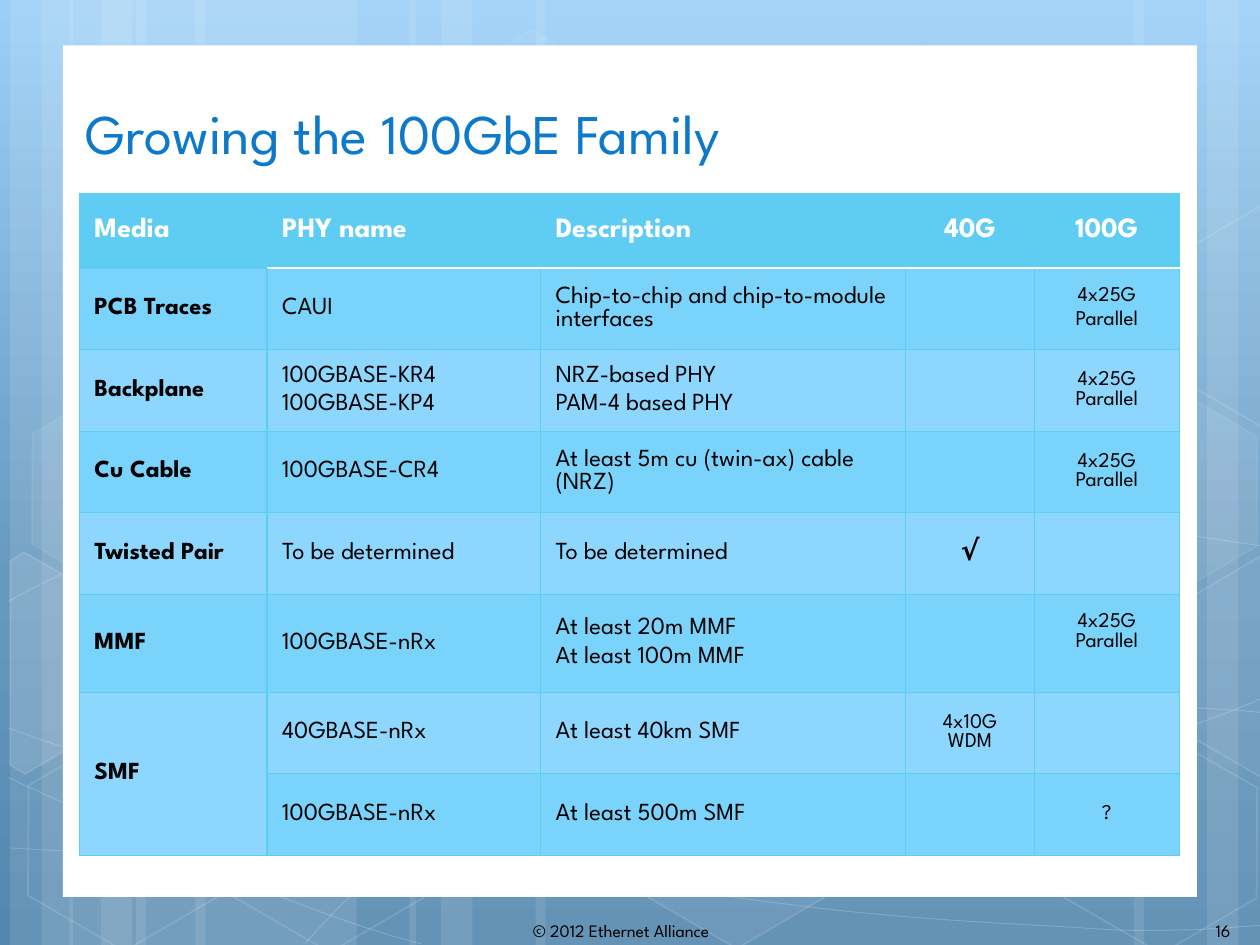
from copy import deepcopy
from dataclasses import dataclass
from math import cos, radians, sin

from lxml import etree
from pptx import Presentation
from pptx.dml.color import RGBColor
from pptx.enum import shapes, text
from pptx.oxml import ns
from pptx.util import Inches, Pt


@dataclass(frozen=True)
class Theme:
    """Colours, font and type sizes of the slide."""
    font: str = "League Spartan"
    white: str = "FFFFFF"
    black: str = "000000"
    title: str = "0D79CA"
    edge: str = "5ECCF3"
    bands: tuple = ("7AD3FA", "8DD7FF")
    sky: tuple = ((0, "9BCFF7"), (0.62, "6798BE"), (1, "5487AE"))
    big: int = 32
    head: int = 16
    body: int = 14
    small: int = 12
    foot: int = 10


T = Theme()
LEFT, MID = text.PP_ALIGN.LEFT, text.PP_ALIGN.CENTER
STRIPES = [
    (1.08, 1.75), (0.08, 0.5), (0.33, 0.83), (1.55, 1.75), (0.55, 0.5), (0.8, 0.83),
    (7.33, 1.75), (9.58, 0.5), (9, 0.83), (4.25, 3.08), (3.25, 0.5), (3.5, 0.83),
]
CURVES = [
    [(0.07, 6.73), (0.61, 6.76), (1.15, 6.79), (1.9, 6.78), (2.65, 6.77), (3.58, 6.75),
     (4.58, 6.65), (5.58, 6.55), (7, 6.36), (7.92, 6.17), (8.83, 5.98), (9.77, 5.68),
     (10.07, 5.51)],
    [(0.07, 4.77), (0.36, 4.61), (0.65, 4.46), (1.21, 4.31), (1.78, 4.16), (2.59, 3.94),
     (3.47, 3.87), (4.36, 3.8), (5.44, 3.79), (6.54, 3.87), (7.64, 3.95), (9.47, 4.26),
     (10.07, 4.34)],
    [(0.06, 6.17), (1.27, 6.72), (2.47, 7.27), (3.34, 7.49)],
    [(0.07, 5.78), (0.38, 5.89), (0.7, 6), (1.28, 6.16), (1.86, 6.31), (2.73, 6.56),
     (3.57, 6.73), (4.4, 6.9), (5.45, 7.08), (6.28, 7.18), (7.11, 7.29), (8, 7.33),
     (8.53, 7.36), (9.05, 7.4), (9.19, 7.38), (9.45, 7.38), (9.71, 7.37), (9.89, 7.35),
     (10.07, 7.34)],
    [(2.42, 7.49), (2.6, 7.29), (2.78, 7.09), (3.02, 6.91), (3.26, 6.73), (3.6, 6.53),
     (3.88, 6.39), (4.16, 6.25), (4.33, 6.19), (4.7, 6.09), (5.06, 5.99), (5.73, 5.85),
     (6.08, 5.78), (6.44, 5.71), (6.49, 5.71), (6.8, 5.69), (7.11, 5.66), (7.6, 5.63),
     (7.94, 5.62), (8.29, 5.61), (8.86, 5.62), (8.86, 5.62), (9.08, 5.62), (9.31, 5.62),
     (9.53, 5.62), (9.71, 5.63), (9.88, 5.64), (10.06, 5.66)],
]
HEXES = [
    (3.34, 0.36, 4, 8), (4.97, 5.89, 6, 12), (0.11, 5.91, 0, 12), (0.14, 3.12, 7, 8),
    (1.74, 5.92, 0, 12), (7.53, 4.53, 10, 12), (8.34, 5.93, 0, 12), (8.34, 3.14, 7, 8),
]
CUTS = [
    ([(0.08, 4.45), (0.19, 4.38), (0.96, 4.82), (0.95, 5.7), (0.2, 6.14), (0.08, 6.07)],
     (0.36, 5.35), 10),
    ([(9.26, 4.85), (10.01, 4.41), (10.09, 4.46), (10.09, 6.13), (10.02, 6.17), (9.26, 5.73)],
     (9.85, 5.2), 4),
    ([(9.26, 2.07), (10.01, 1.63), (10.1, 1.68), (10.09, 3.35), (10.02, 3.39), (9.26, 2.95)],
     (9.85, 2.41), 0),
]
COLS = [1.49, 2.17, 2.9, 1.02, 1.15]
ROWS = [0.59, 0.65, 0.65, 0.65, 0.65, 0.78, 0.65, 0.65]
CELLS = [
    ["Media", "PHY name", "Description", "40G", "100G"],
    ["PCB Traces", "CAUI", "Chip-to-chip and chip-to-module interfaces", "", "4x25G\nParallel"],
    ["Backplane", "100GBASE-KR4\n100GBASE-KP4", "NRZ-based PHY\nPAM-4 based PHY", "",
     "4x25G Parallel"],
    ["Cu Cable", "100GBASE-CR4", "At least 5m cu (twin-ax) cable (NRZ)", "", "4x25G Parallel"],
    ["Twisted Pair", "To be determined", "To be determined", "√", ""],
    ["MMF", "100GBASE-nRx", "At least 20m MMF\nAt least 100m MMF", "", "4x25G Parallel"],
    ["SMF", "40GBASE-nRx", "At least 40km SMF", "4x10G WDM", ""],
    ["", "100GBASE-nRx", "At least 500m SMF", "", "?"],
]


def rgb(hue):
    """Turn a hex string into a colour."""
    return RGBColor.from_string(hue)


def paint(shape, fill=0, line=0, width=1):
    """Give a shape white fill and line at the given percent opacity."""
    shape.shadow.inherit = False
    for coat, alpha in ((shape.fill, fill), (shape.line.fill, line)):
        if not alpha:
            coat.background()
            continue
        coat.solid()
        coat.fore_color.rgb = rgb(T.white)
    if line:
        shape.line.width = Pt(width)
    props = shape.element.spPr
    for root, alpha in ((props, fill), (props.find(ns.qn("a:ln")), line)):
        if 0 < alpha < 100:
            hue = root.find(ns.qn("a:solidFill"))[0]
            etree.SubElement(hue, ns.qn("a:alpha"), val=str(alpha * 1000))


def write(frame, words, size, hue, bold=False, align=LEFT):
    """Write each line of words as a paragraph."""
    for i, line in enumerate(words.split("\n")):
        para = frame.add_paragraph() if i else frame.paragraphs[0]
        para.alignment = align
        para.space_before = Pt(size * 0.23 if i else 0)
        run = para.add_run()
        run.text = line
        font = run.font
        font.name, font.size, font.bold = T.font, Pt(size), bold
        font.color.rgb = rgb(hue)


def block(slide, kind, box):
    """Add a preset shape in a box given in inches."""
    return slide.shapes.add_shape(kind, *map(Inches, box))


def outline(slide, points, close):
    """Add a freeform through points given in inches."""
    spots = [(Inches(x), Inches(y)) for x, y in points]
    pen = slide.shapes.build_freeform(*spots[0])
    pen.add_line_segments(spots[1:], close=close)
    return pen.convert_to_shape()


def curve(slide, knots):
    """Add an open chain of cubic curves."""
    shape = outline(slide, knots, False)
    lines = list(shape.element.iter(ns.qn("a:lnTo")))
    for i in range(0, len(lines), 3):
        arc = etree.SubElement(lines[i].getparent(), ns.qn("a:cubicBezTo"))
        for line in lines[i:i + 3]:
            arc.append(line[0])
            line.getparent().remove(line)
    return shape


def tilt(points, mid, angle):
    """Turn points about a centre by an angle in degrees."""
    c, s = cos(radians(angle)), sin(radians(angle))
    moves = [(x - mid[0], y - mid[1]) for x, y in points]
    return [(mid[0] + x * c - y * s, mid[1] + x * s + y * c) for x, y in moves]


def backdrop(slide, box):
    """Draw the sky, stripes, curves and hexagons behind a white panel."""
    fill = slide.background.fill
    fill.gradient()
    fill.gradient_angle = 270
    stops = next(slide.element.iter(ns.qn("a:gsLst")))
    stops.insert(1, deepcopy(stops[0]))
    for stop, (place, hue) in zip(fill.gradient_stops, T.sky):
        stop.position, stop.color.rgb = place, rgb(hue)
    for left, width in STRIPES:
        paint(block(slide, shapes.MSO_SHAPE.RECTANGLE, (left, 0, width, 7.5)), 10)
    for knots in CURVES:
        paint(curve(slide, knots), 0, 20, 0.5)
    for left, top, fill, line in HEXES:
        cell = block(slide, shapes.MSO_SHAPE.HEXAGON, (left, top, 1.75, 1.52))
        cell.adjustments[0], cell.rotation = 0.285, 30
        paint(cell, fill, line)
    for points, mid, fill in CUTS:
        cut = outline(slide, tilt(points, mid, -30), True)
        cut.rotation = 30
        paint(cut, fill, 12)
    paint(block(slide, shapes.MSO_SHAPE.RECTANGLE, box), 100)


def heading(slide, box, words):
    """Place and format the title."""
    head = slide.shapes.title
    head.left, head.top, head.width, head.height = map(Inches, box)
    frame = head.text_frame
    frame.vertical_anchor = text.MSO_ANCHOR.MIDDLE
    frame.auto_size = text.MSO_AUTO_SIZE.NONE
    write(frame, words, T.big, T.title)


def footer(slide, box, words):
    """Add one unwrapped line of footer text."""
    frame = slide.shapes.add_textbox(*map(Inches, box)).text_frame
    frame.word_wrap = False
    write(frame, words, T.foot, T.black)


def border(cell, row, col):
    """Rule the four sides of a cell."""
    thin, thick, white = (T.edge, 0.75), (T.edge, 1.25), (T.white, 1.25)
    sides = {"L": thick if col == 1 and row else thin, "R": thin if col or not row else thick,
             "T": white if row == 1 and col else thin, "B": white if not row and col else thin}
    props = cell._tc.get_or_add_tcPr()
    for side, (hue, width) in sides.items():
        line = etree.SubElement(props, ns.qn("a:ln" + side), w=str(Pt(width)))
        solid = etree.SubElement(line, ns.qn("a:solidFill"))
        etree.SubElement(solid, ns.qn("a:srgbClr"), val=hue)


def grid(slide, box):
    """Build the table of media and interfaces."""
    table = slide.shapes.add_table(len(ROWS), len(COLS), *map(Inches, box)).table
    table.horz_banding = False
    for col, width in zip(table.columns, COLS):
        col.width = Inches(width)
    for row, height in zip(table.rows, ROWS):
        row.height = Inches(height * box[3] / sum(ROWS))
    for r, line in enumerate(CELLS):
        for c, words in enumerate(line):
            cell = table.cell(r, c)
            border(cell, r, c)
            cell.fill.solid()
            cell.fill.fore_color.rgb = rgb(T.bands[(r + 1) % 2] if r else T.edge)
            cell.vertical_anchor = text.MSO_ANCHOR.MIDDLE
            cell.margin_left = cell.margin_right = Inches(0.12)
            cell.margin_top = cell.margin_bottom = Inches(0.05)
            if words:
                big = not r or words == "√"
                size = T.head if big else T.body if c < 3 else T.small
                write(cell.text_frame, words, size, T.black if r else T.white,
                      big or c == 0, LEFT if c < 3 else MID)
    table.cell(5, 4).margin_bottom = Inches(0.22)
    table.cell(6, 0).merge(table.cell(7, 0))


def main():
    """Build the slide and save it."""
    deck = Presentation()
    deck.slide_width, deck.slide_height = Inches(10), Inches(7.5)
    slide = deck.slides.add_slide(deck.slide_layouts[5])
    backdrop(slide, (0.5, 0.36, 9, 6.76))
    footer(slide, (9.55, 7.25, 0.37, 0.27), "16")
    footer(slide, (4.13, 7.25, 1.85, 0.27), "© 2012 Ethernet Alliance")
    title = slide.shapes.title.element
    title.getparent().append(title)
    heading(slide, (0.58, 0.42, 7.17, 1.25), "Growing the 100GbE Family")
    grid(slide, (0.63, 1.54, 8.73, 5.25))
    deck.save("out.pptx")


if __name__ == "__main__":
    main()
